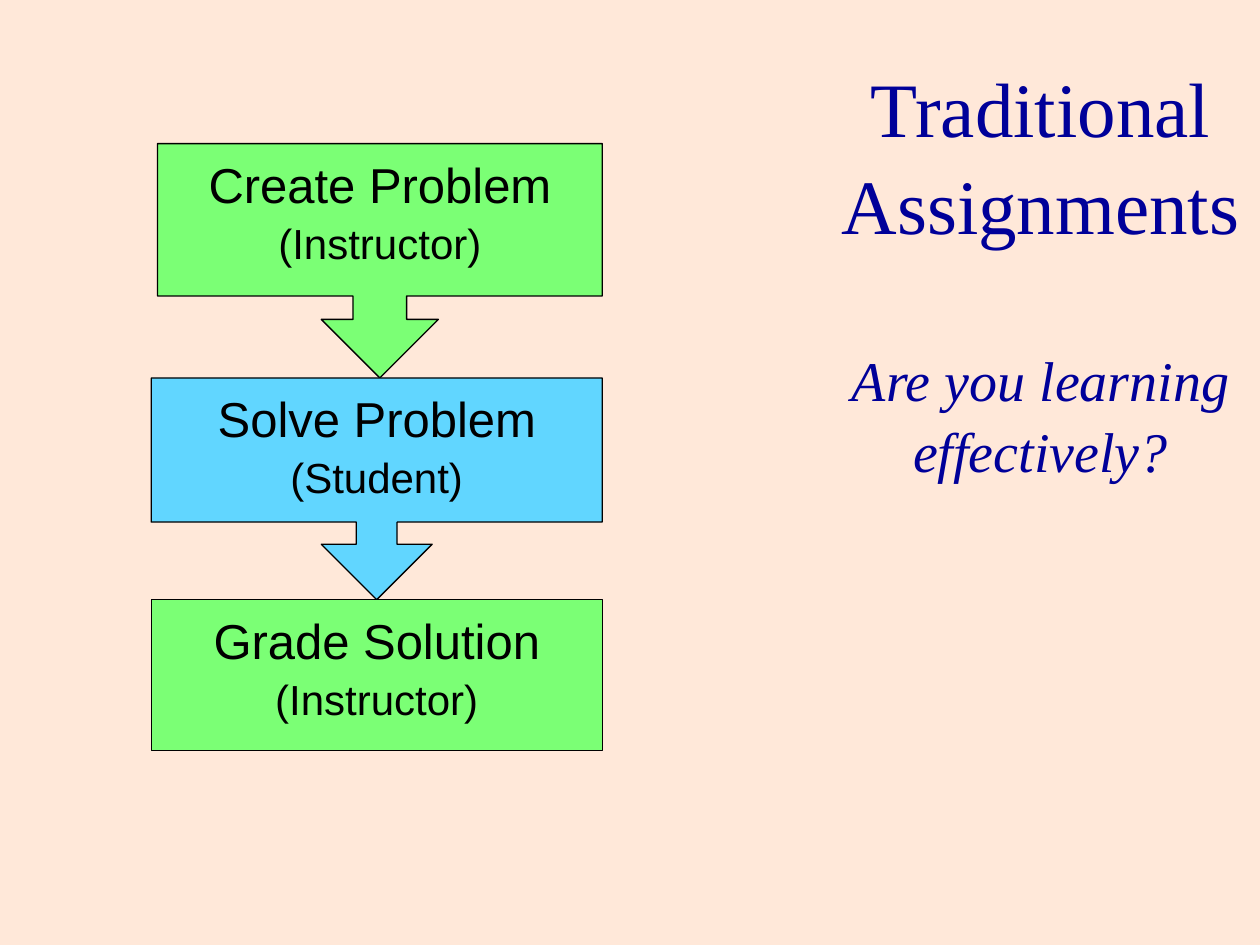
"""Build a slide on traditional assignments with a three-step flow of callouts."""
import pptx
import pptx.dml.color
import pptx.enum.shapes
import pptx.enum.text
import pptx.util

Inches = pptx.util.Inches
Pt = pptx.util.Pt
SHAPE = pptx.enum.shapes.MSO_SHAPE

THEME = {
    "background": "FFE8D9",
    "Instructor": "7BFF75",
    "Student": "61D6FF",
    "outline": "000000",
    "step text": "000000",
    "heading": "000099",
    "step font": "Arial",
    "heading font": "Times New Roman",
    "step size": 28,
    "actor size": 24,
    "heading size": 44,
    "question size": 32,
    "step spacing": 1.08,
    "heading spacing": 1.05,
    "outline width": 0.75,
}

HEADING = "Traditional Assignments"
QUESTION = "Are you learning effectively?"
HEADING_BOX = (6.52, 0.39, 3.48, 3.4)
QUESTION_GAP = 53

CALLOUT = SHAPE.DOWN_ARROW_CALLOUT
STEPS = [
    ("Create Problem", "Instructor", CALLOUT, 1.25, 1.86, (0.229, 0.25, 0.25, 0.65)),
    ("Solve Problem", "Student", CALLOUT, 1.2, 1.76, (0.184, 0.25, 0.25, 0.65)),
    ("Grade Solution", "Instructor", SHAPE.RECTANGLE, 1.2, 1.2, ()),
]
STEPS_TOP = 1.14
STEPS_RIGHT = 4.78


def color(name):
    return pptx.dml.color.RGBColor.from_string(THEME[name])


def write_lines(text_frame, lines, kind):
    text_frame.word_wrap = True
    text_frame.vertical_anchor = pptx.enum.text.MSO_ANCHOR.TOP
    text_frame.text = "\n".join(text for text, size in lines)
    for paragraph, (text, size) in zip(text_frame.paragraphs, lines):
        paragraph.alignment = pptx.enum.text.PP_ALIGN.CENTER
        paragraph.line_spacing = THEME[kind + " spacing"]
        paragraph.font.name = THEME[kind + " font"]
        paragraph.font.size = Pt(THEME[size])


def add_step(slide, step, top):
    label, actor, preset, left, height, adjustments = step
    shape = slide.shapes.add_shape(
        preset, Inches(left), Inches(top), Inches(STEPS_RIGHT - left), Inches(height))
    for index, value in enumerate(adjustments):
        shape.adjustments[index] = value
    shape.shadow.inherit = False
    shape.fill.solid()
    shape.fill.fore_color.rgb = color(actor)
    shape.line.color.rgb = color("outline")
    shape.line.width = Pt(THEME["outline width"])
    lines = [(label, "step size"), (f"({actor})", "actor size")]
    write_lines(shape.text_frame, lines, "step")
    for paragraph in shape.text_frame.paragraphs:
        paragraph.font.color.rgb = color("step text")


def add_heading(slide):
    title = slide.shapes.title
    title.left, title.top, title.width, title.height = map(Inches, HEADING_BOX)
    title.text_frame.auto_size = pptx.enum.text.MSO_AUTO_SIZE.NONE
    lines = [(HEADING, "heading size"), (QUESTION, "question size")]
    write_lines(title.text_frame, lines, "heading")
    for paragraph in title.text_frame.paragraphs:
        paragraph.font.color.rgb = color("heading")
    question = title.text_frame.paragraphs[1]
    question.space_before = Pt(QUESTION_GAP)
    question.font.italic = True


def main():
    presentation = pptx.Presentation()
    presentation.slide_width = Inches(10)
    presentation.slide_height = Inches(7.5)
    slide = presentation.slides.add_slide(presentation.slide_layouts[5])
    slide.background.fill.solid()
    slide.background.fill.fore_color.rgb = color("background")
    top = STEPS_TOP
    for step in STEPS:
        add_step(slide, step, top)
        top += step[4]
    add_heading(slide)
    presentation.save("out.pptx")


if __name__ == "__main__":
    main()
